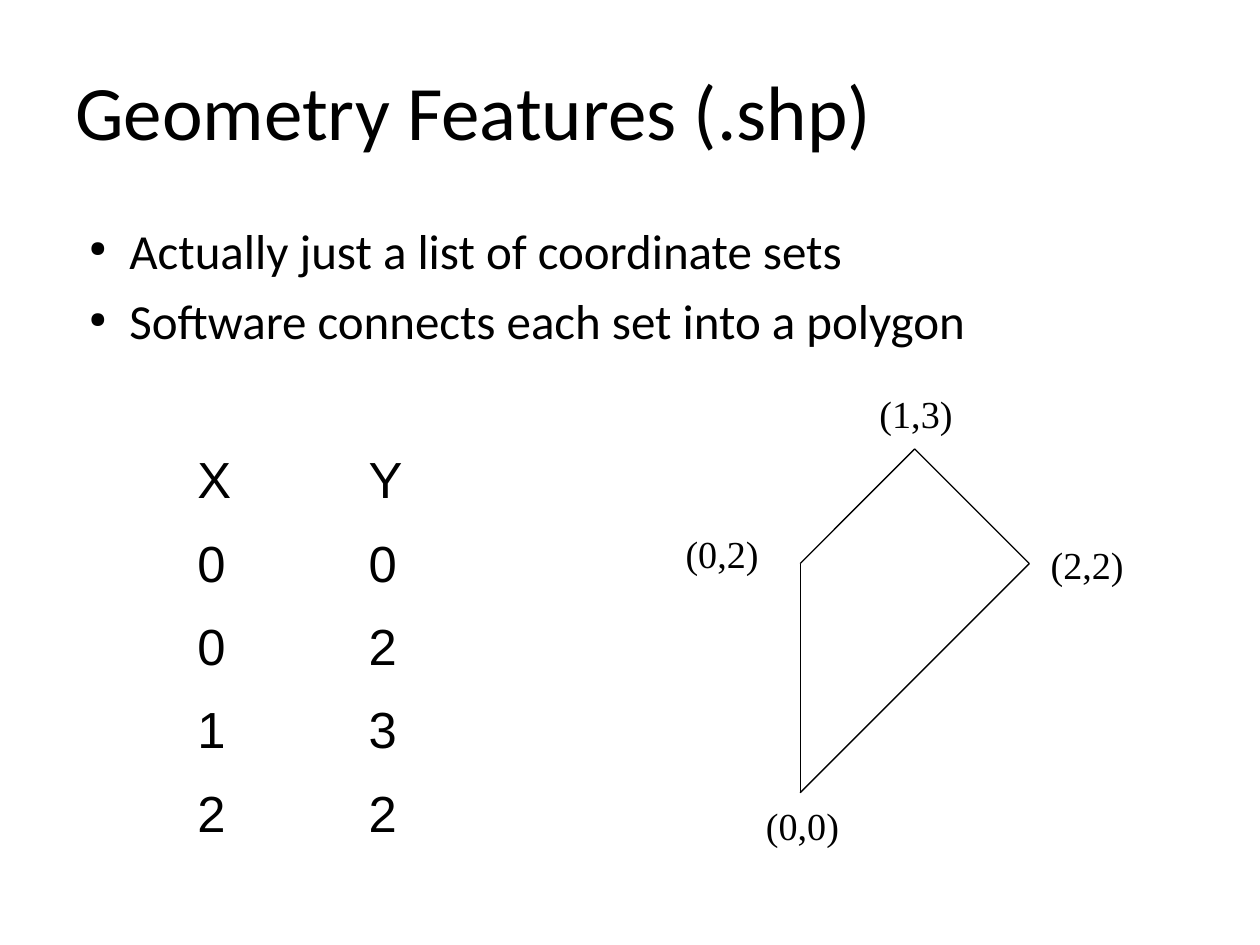
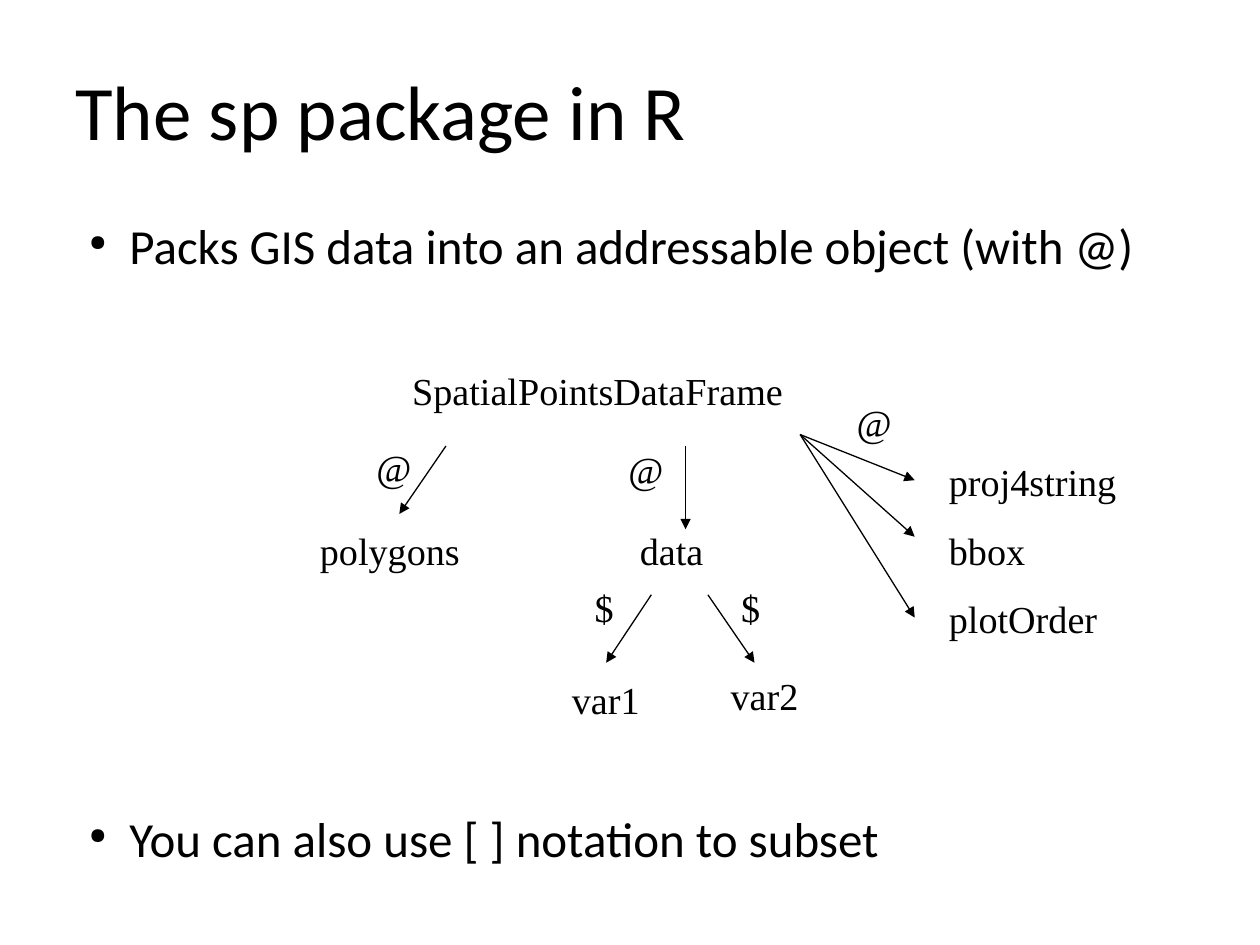
import dataclasses
import typing

import pptx
import pptx.dml.color
import pptx.enum.shapes
import pptx.enum.text
import pptx.oxml.ns
import pptx.presentation
import pptx.shapes.base
import pptx.slide
import pptx.text.text
import pptx.util
from lxml import etree

Cm = pptx.util.Cm
Pt = pptx.util.Pt

BLACK = pptx.dml.color.RGBColor(0x00, 0x00, 0x00)
WHITE = pptx.dml.color.RGBColor(0xFF, 0xFF, 0xFF)
SANS = "Calibri"
SERIF = "Times New Roman"
GRID = "Arial"

CORNERS = [(0, 0), (0, 2), (1, 3), (2, 2)]
BASE_X, BASE_Y, UNIT = 16.13, 15.98, 2.31
LABEL_H = 0.86


@dataclasses.dataclass
class Label:
    text: str
    left: float
    top: float
    width: float
    fill: typing.Optional[pptx.dml.color.RGBColor] = None


@dataclasses.dataclass
class Line:
    x1: float
    y1: float
    x2: float
    y2: float
    arrow: bool = False


@dataclasses.dataclass
class Bullet:
    text: str
    before: float = 10


def add_tag(parent: typing.Any, tag: str, **attrs: str) -> typing.Any:
    return etree.SubElement(parent, pptx.oxml.ns.qn(tag), attrs)


def style(par: typing.Any, face: str, size: float) -> None:
    for run in par.runs:
        run.font.name = face
        run.font.size = Pt(size)
        run.font.color.rgb = BLACK


def set_place(shape: typing.Any, left: float, top: float, width: float, height: float) -> None:
    shape.left, shape.top = Cm(left), Cm(top)
    shape.width, shape.height = Cm(width), Cm(height)


def set_pad(frame: typing.Any, left: float, top: float, right: float, bottom: float) -> None:
    frame.margin_left, frame.margin_top = Cm(left), Cm(top)
    frame.margin_right, frame.margin_bottom = Cm(right), Cm(bottom)


def add_page(deck: pptx.presentation.Presentation, title: str) -> pptx.slide.Slide:
    page = deck.slides.add_slide(deck.slide_layouts[5])
    head = page.shapes.title
    set_place(head, 1.27, 0.76, 22.86, 3.18)
    frame = head.text_frame
    frame.text = title
    frame.vertical_anchor = pptx.enum.text.MSO_ANCHOR.MIDDLE
    set_pad(frame, 0.25, 0.08, 0.25, 0.13)
    par = frame.paragraphs[0]
    par.alignment = pptx.enum.text.PP_ALIGN.LEFT
    par.line_spacing = 0.9
    style(par, SANS, 44)
    return page


def add_list(page: pptx.slide.Slide, items: list[Bullet], height: float, spacing: float) -> None:
    box = page.shapes.add_textbox(Cm(1.27), Cm(4.45), Cm(22.86), Cm(height))
    frame = box.text_frame
    frame.word_wrap = True
    frame.text = "\n".join(item.text for item in items)
    for par, item in zip(frame.paragraphs, items):
        par.line_spacing = spacing
        par.space_before = Pt(item.before)
        style(par, SANS, 28)
        props = par._p.get_or_add_pPr()
        props.set("marL", str(Cm(1.09)))
        props.set("indent", str(Cm(-0.81)))
        add_tag(props, "a:buSzPct", val="45000")
        add_tag(props, "a:buChar", char="●")


def add_label(page: pptx.slide.Slide, label: Label) -> None:
    place = Cm(label.left), Cm(label.top), Cm(label.width), Cm(LABEL_H)
    if label.fill is None:
        box = page.shapes.add_textbox(*place)
    else:
        box = page.shapes.add_shape(pptx.enum.shapes.MSO_SHAPE.RECTANGLE, *place)
        box.shadow.inherit = False
        box.fill.solid()
        box.fill.fore_color.rgb = label.fill
        box.line.fill.background()
    frame = box.text_frame
    frame.word_wrap = True
    frame.vertical_anchor = pptx.enum.text.MSO_ANCHOR.TOP
    set_pad(frame, 0, 0.05, 0, 0)
    frame.text = label.text
    par = frame.paragraphs[0]
    par.alignment = pptx.enum.text.PP_ALIGN.LEFT
    par.line_spacing = 0.93
    style(par, SERIF, 21.8)


def add_line(page: pptx.slide.Slide, line: Line) -> None:
    link = page.shapes.add_connector(
        pptx.enum.shapes.MSO_CONNECTOR.STRAIGHT,
        Cm(line.x1), Cm(line.y1), Cm(line.x2), Cm(line.y2),
    )
    link.line.color.rgb = BLACK
    link.line.width = Pt(0.75)
    if line.arrow:
        add_tag(link.line._get_or_add_ln(), "a:tailEnd", type="triangle")
    add_tag(link._element.spPr, "a:effectLst")


def add_grid(page: pptx.slide.Slide, rows: list[tuple]) -> None:
    col, row = 3.45, 1.68
    frame = page.shapes.add_table(
        len(rows), 2, Cm(3.98), Cm(9.13), Cm(2 * col), Cm(len(rows) * row)
    )
    table = frame.table
    table.first_row = False
    table.horz_banding = False
    for r, pair in enumerate(rows):
        for c, value in enumerate(pair):
            cell = table.cell(r, c)
            cell.fill.background()
            set_pad(cell, 0, 0, 0, 0)
            cell.text_frame.text = str(value)
            style(cell.text_frame.paragraphs[0], GRID, 29)


def add_shp(deck: pptx.presentation.Presentation) -> None:
    page = add_page(deck, "Geometry Features (.shp)")
    add_list(
        page,
        [
            Bullet("Actually just a list of coordinate sets"),
            Bullet("Software connects each set into a polygon"),
        ],
        2.92,
        0.9,
    )
    add_grid(page, [("X", "Y"), *CORNERS])
    spots = [(BASE_X + UNIT * x, BASE_Y - UNIT * y) for x, y in CORNERS]
    for start, end in zip(spots, spots[1:] + spots[:1]):
        add_line(page, Line(*start, *end))
    places = [(15.44, 16.21), (13.82, 10.72), (17.73, 7.9), (21.18, 10.95)]
    for (x, y), (left, top) in zip(CORNERS, places):
        add_label(page, Label(f"({x},{y})", left, top, 1.85, WHITE))


def add_sp(deck: pptx.presentation.Presentation) -> None:
    page = add_page(deck, "The sp package in R")
    add_list(
        page,
        [
            Bullet("Packs GIS data into an addressable object (with @)"),
            Bullet("You can also use [ ] notation to subset", 312),
        ],
        13.51,
        0.8,
    )
    labels = [
        Label("SpatialPointsDataFrame", 8.31, 7.44, 7.82),
        Label("polygons", 6.45, 10.67, 3.23),
        Label("data", 12.9, 10.67, 1.6),
        Label("var1", 11.53, 13.67, 1.6),
        Label("var2", 14.73, 13.59, 1.6),
    ]
    slots = [("proj4string", 3.91), ("bbox", 2.08), ("plotOrder", 3.23)]
    labels += [
        Label(text, 19.13, 9.27 + 1.385 * i, width)
        for i, (text, width) in enumerate(slots)
    ]
    marks = [
        ("@", 12.67, 9.04),
        ("@", 7.59, 8.99),
        ("@", 17.27, 8.08),
        ("$", 11.99, 11.81),
        ("$", 14.94, 11.81),
    ]
    labels += [Label(*mark, 1.14) for mark in marks]
    arrows = [
        (8.99, 8.99, 8.05, 10.36),
        (13.82, 8.99, 13.82, 10.67),
        (13.13, 11.99, 12.22, 13.36),
        (14.27, 11.99, 15.21, 13.36),
    ]
    arrows += [(16.13, 8.76, 18.44, y) for y in (9.68, 10.82, 12.45)]
    for label in labels:
        add_label(page, label)
    for ends in arrows:
        add_line(page, Line(*ends, arrow=True))


def main() -> None:
    deck = pptx.Presentation()
    deck.slide_width, deck.slide_height = Cm(25.4), Cm(19.05)
    add_shp(deck)
    add_sp(deck)
    deck.save("out.pptx")


if __name__ == "__main__":
    main()
